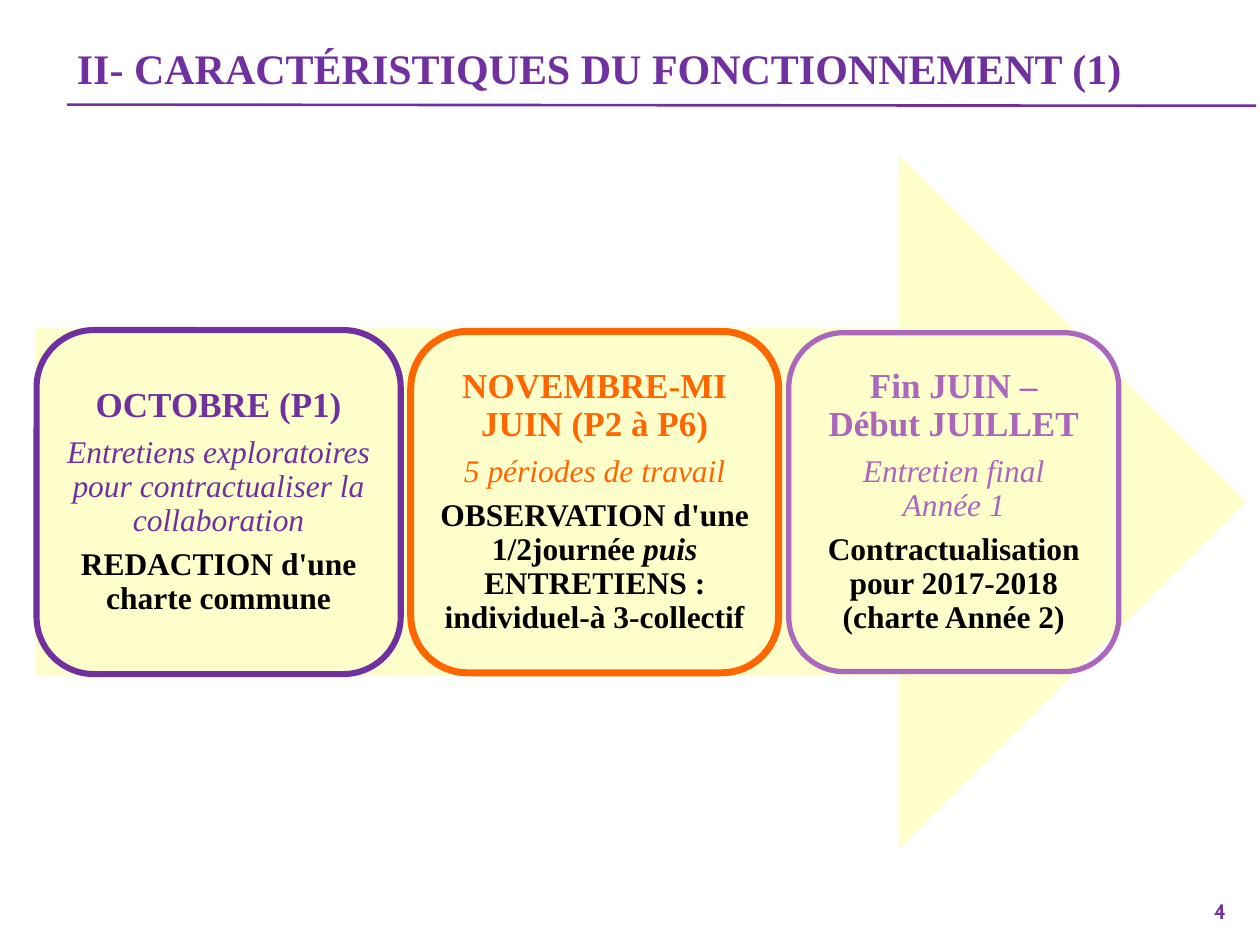
from dataclasses import dataclass

from lxml.etree import SubElement
from pptx import Presentation
from pptx.dml.color import RGBColor
from pptx.enum.shapes import MSO_CONNECTOR, MSO_SHAPE
from pptx.enum.text import MSO_ANCHOR, MSO_AUTO_SIZE, PP_ALIGN
from pptx.oxml.ns import qn
from pptx.util import Inches, Pt


@dataclass(frozen=True)
class Theme:
    serif: str = "Times New Roman"
    sans: str = "Cabin"
    violet: str = "7030A0"
    orange: str = "FF6600"
    mauve: str = "AC66BB"
    cream: str = "FFFFCC"
    ink: str = "000000"
    title: int = 24
    period: int = 20
    detail: int = 18
    number: int = 12


THEME = Theme()
TITLE = "II- CARACTÉRISTIQUES DU FONCTIONNEMENT (1)"
PAGE_NUMBER = "4"

STAGES = [
    {"color": THEME.violet, "width": 2.89, "height": 2.73, "border": 3.5,
     "period": ["OCTOBRE (P1)"],
     "work": ["Entretiens exploratoires pour contractualiser la collaboration"],
     "outcome": [("REDACTION d'une charte commune", False)]},
    {"color": THEME.orange, "width": 2.92, "height": 2.71, "border": 4,
     "period": ["NOVEMBRE-MI JUIN (P2 à P6)"],
     "work": ["5 périodes de travail"],
     "outcome": [("OBSERVATION d'une 1/2journée ", False), ("puis ", True),
                 ("ENTRETIENS : individuel-à 3-collectif", False)]},
    {"color": THEME.mauve, "width": 2.62, "height": 2.69, "border": 3,
     "period": ["Fin JUIN –", "Début JUILLET"],
     "work": ["Entretien final", "Année 1"],
     "outcome": [("Contractualisation pour 2017-2018 (charte Année 2)", False)]},
]

ARROW_LEFT, ARROW_TOP, ARROW_WIDTH, ARROW_HEIGHT = 0.28, 1.23, 9.61, 5.51
STAGE_LEFT, STAGE_GAP, STAGE_INSET = 0.29, 0.08, 0.08
LINE_SPACING, SPACE_AFTER = 0.9, 6


def box(left, top, width, height):
    return [Inches(length) for length in (left, top, width, height)]


def style(run, size, color, font=THEME.serif, bold=True, italic=False):
    run.font.name = font
    run.font.size = Pt(size)
    run.font.bold = bold
    run.font.italic = italic
    run.font.color.rgb = RGBColor.from_string(color)


def add_heading(slide):
    title = slide.shapes.title
    title.left, title.top, title.width, title.height = box(0.51, 0.29, 8.74, 0.5)
    frame = title.text_frame
    frame.text = TITLE
    frame.auto_size = MSO_AUTO_SIZE.NONE
    frame.vertical_anchor = MSO_ANCHOR.MIDDLE
    frame.paragraphs[0].alignment = PP_ALIGN.LEFT
    style(frame.paragraphs[0].runs[0], THEME.title, THEME.violet)

    rule = slide.shapes.add_connector(
        MSO_CONNECTOR.STRAIGHT, Inches(0.53), Inches(0.83), Inches(9.97), Inches(0.84))
    rule.line.color.rgb = RGBColor.from_string(THEME.violet)
    rule.line.width = Pt(1.5)
    SubElement(rule._element.spPr, qn("a:effectLst"))


def add_page_number(slide):
    frame = slide.shapes.add_textbox(*box(9, 7.08, 0.83, 0.27)).text_frame
    frame.word_wrap = True
    frame.text = PAGE_NUMBER
    frame.paragraphs[0].alignment = PP_ALIGN.RIGHT
    style(frame.paragraphs[0].runs[0], THEME.number, THEME.violet, THEME.sans)


def add_arrow(slide):
    arrow = slide.shapes.add_shape(
        MSO_SHAPE.RIGHT_ARROW, *box(ARROW_LEFT, ARROW_TOP, ARROW_WIDTH, ARROW_HEIGHT))
    arrow.shadow.inherit = False
    arrow.fill.solid()
    arrow.fill.fore_color.rgb = RGBColor.from_string(THEME.cream)
    arrow.line.fill.background()


def write_stage(frame, stage):
    period, work = stage["period"], stage["work"]
    frame.text = "\n".join(period + work)
    for index, paragraph in enumerate(frame.paragraphs):
        in_period = index < len(period)
        closes_part = index + 1 in (len(period), len(period) + len(work))
        paragraph.space_after = Pt(SPACE_AFTER if closes_part else 0)
        style(paragraph.runs[0], THEME.period if in_period else THEME.detail,
              stage["color"], bold=in_period, italic=not in_period)

    outcome = frame.add_paragraph()
    outcome.space_after = Pt(SPACE_AFTER)
    for words, italic in stage["outcome"]:
        run = outcome.add_run()
        run.text = words
        style(run, THEME.detail, THEME.ink, italic=italic)

    for paragraph in frame.paragraphs:
        paragraph.alignment = PP_ALIGN.CENTER
        paragraph.line_spacing = LINE_SPACING


def add_stages(slide):
    left = STAGE_LEFT
    middle = ARROW_TOP + ARROW_HEIGHT / 2
    for stage in STAGES:
        width, height = stage["width"], stage["height"]
        card = slide.shapes.add_shape(
            MSO_SHAPE.ROUNDED_RECTANGLE, *box(left, middle - height / 2, width, height))
        card.shadow.inherit = False
        card.fill.background()
        card.line.color.rgb = RGBColor.from_string(stage["color"])
        card.line.width = Pt(stage["border"])
        frame = card.text_frame
        frame.word_wrap = True
        frame.vertical_anchor = MSO_ANCHOR.MIDDLE
        frame.margin_left = frame.margin_right = Inches(STAGE_INSET)
        frame.margin_top = frame.margin_bottom = Inches(STAGE_INSET)
        write_stage(frame, stage)
        left += width + STAGE_GAP


def main():
    deck = Presentation()
    deck.slide_width, deck.slide_height = Inches(10), Inches(7.5)
    slide = deck.slides.add_slide(deck.slide_layouts[5])
    add_heading(slide)
    add_page_number(slide)
    add_arrow(slide)
    add_stages(slide)
    deck.save("out.pptx")


if __name__ == "__main__":
    main()
